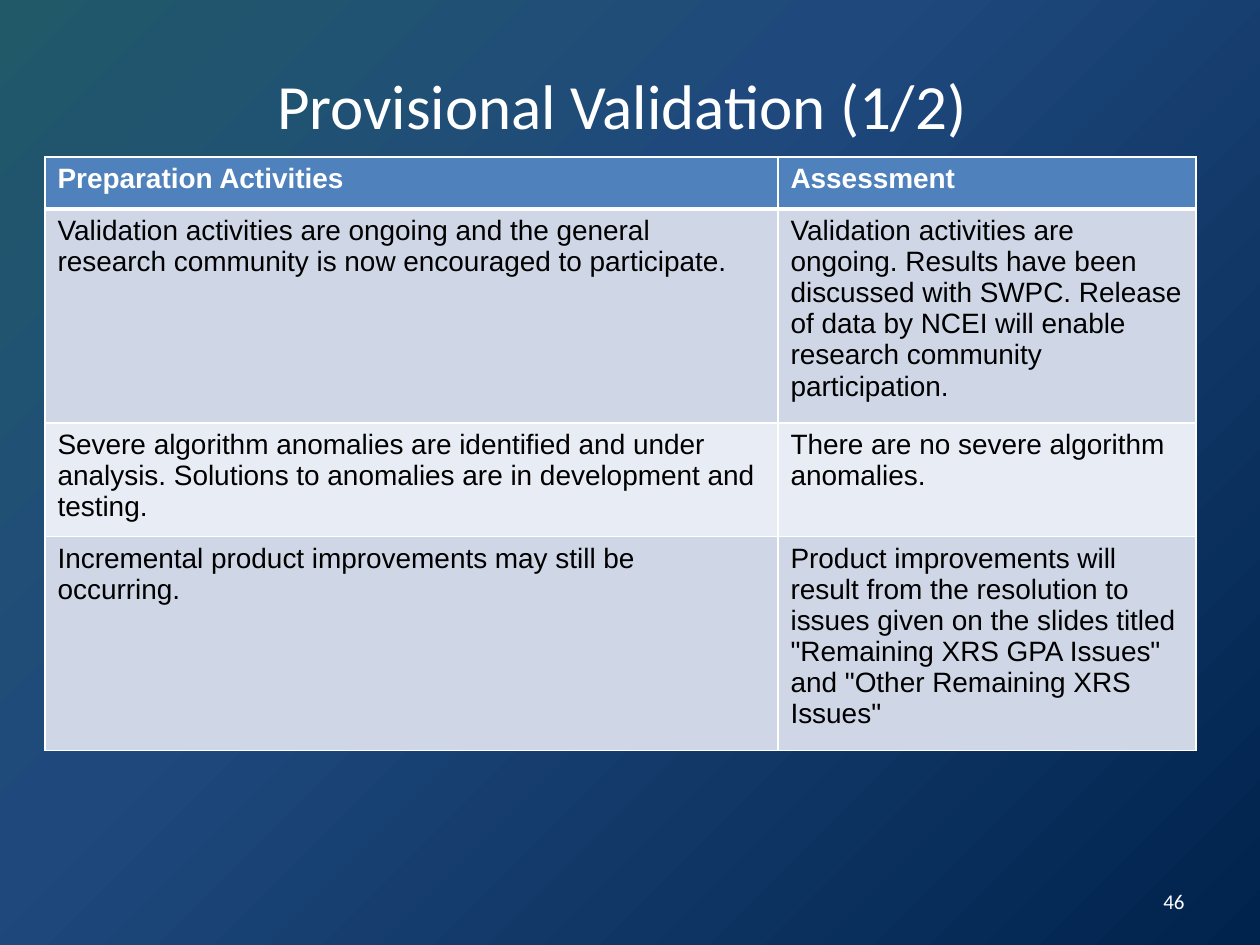
from lxml import etree
from pptx import Presentation
from pptx.dml.color import RGBColor as Rgb
from pptx.enum.text import MSO_ANCHOR as Anchor, PP_ALIGN as Align
from pptx.oxml.ns import qn
from pptx.util import Emu, Pt

SCALE = 914400 / 126  # EMU per px
WHITE, BLACK, BLUE = "FFFFFF", "000000", "4F81BD"
BANDS = ["CFD7E7", "E8ECF4"]
STOPS = [(0, "215968"), (40, "1F497D"), (100, "00234D")]
COLS = [733, 418]
ROW = 52
ROWS = [
    ("Preparation Activities", "Assessment"),
    ("Validation activities are ongoing and the general research community "
     "is now encouraged to participate.",
     "Validation activities are ongoing. Results have been discussed with SWPC. "
     "Release of data by NCEI will enable research community participation."),
    ("Severe algorithm anomalies are identified and under analysis. "
     "Solutions to anomalies are in development and testing.",
     "There are no severe algorithm anomalies."),
    ("Incremental product improvements may still be occurring.",
     "Product improvements will result from the resolution to issues given on "
     'the slides titled "Remaining XRS GPA Issues" and "Other Remaining XRS Issues"'),
]


def px(n):
    return Emu(round(n * SCALE))


def rgb(code):
    return Rgb.from_string(code)


def node(parent, tag, **attrs):
    return etree.SubElement(parent, qn(tag), attrs)


def style(para, name, size, color, bold=False):
    font = para.font
    font.name, font.size, font.bold = name, Pt(size), bold
    font.color.rgb = rgb(color)


def add_back(slide):
    """Radial gradient that spreads from the top left corner."""
    slide.background.fill.gradient()
    grad = slide.element.find(".//" + qn("a:gradFill"))
    for child in list(grad):
        grad.remove(child)
    stops = node(grad, "a:gsLst")
    for pos, color in STOPS:
        stop = node(stops, "a:gs", pos=str(pos * 1000))
        node(stop, "a:srgbClr", val=color)
    circle = node(grad, "a:path", path="circle")
    node(circle, "a:fillToRect", r="100000", b="100000")


def add_text(slide, text, box, size, align):
    frame = slide.shapes.add_textbox(*map(px, box)).text_frame
    frame.word_wrap = True
    frame.vertical_anchor = Anchor.MIDDLE
    para = frame.paragraphs[0]
    para.text, para.alignment = text, align
    style(para, "Calibri", size, WHITE)


def add_edges(cell, widths):
    props = cell._tc.get_or_add_tcPr()
    for side, width in widths.items():
        line = node(props, "a:ln" + side, w=str(Pt(width)))
        fill = node(line, "a:solidFill")
        node(fill, "a:srgbClr", val=WHITE)


def fill_cell(cell, text, row):
    head = row == 0
    # Borders come before the fill in the cell properties
    add_edges(cell, {"L": 1, "R": 1, "T": 3 if row == 1 else 1, "B": 3 if head else 1})
    cell.fill.solid()
    cell.fill.fore_color.rgb = rgb(BLUE if head else BANDS[(row - 1) % 2])
    para = cell.text_frame.paragraphs[0]
    para.text = text
    style(para, "Arial", 16, WHITE if head else BLACK, head)


def add_grid(slide, left, top, height):
    frame = slide.shapes.add_table(
        len(ROWS), len(COLS), px(left), px(top), px(sum(COLS)), px(height))
    table = frame.table
    table.horz_banding = False
    for col, width in zip(table.columns, COLS):
        col.width = px(width)
    for r, texts in enumerate(ROWS):
        table.rows[r].height = px(ROW)
        for c, text in enumerate(texts):
            fill_cell(table.cell(r, c), text, r)
    frame.height = px(height)  # rows grow with their text


def main():
    prs = Presentation()
    prs.slide_width, prs.slide_height = px(1260), px(945)
    slide = prs.slides.add_slide(prs.slide_layouts[6])
    add_back(slide)
    # Title and page number
    add_text(slide, "Provisional Validation (1/2)", (55, 33, 1134, 142), 36, Align.CENTER)
    add_text(slide, "46", (903, 876, 294, 50), 12, Align.RIGHT)
    # Activities and their assessment
    add_grid(slide, 45, 157, 593)
    prs.save("out.pptx")


if __name__ == "__main__":
    main()
